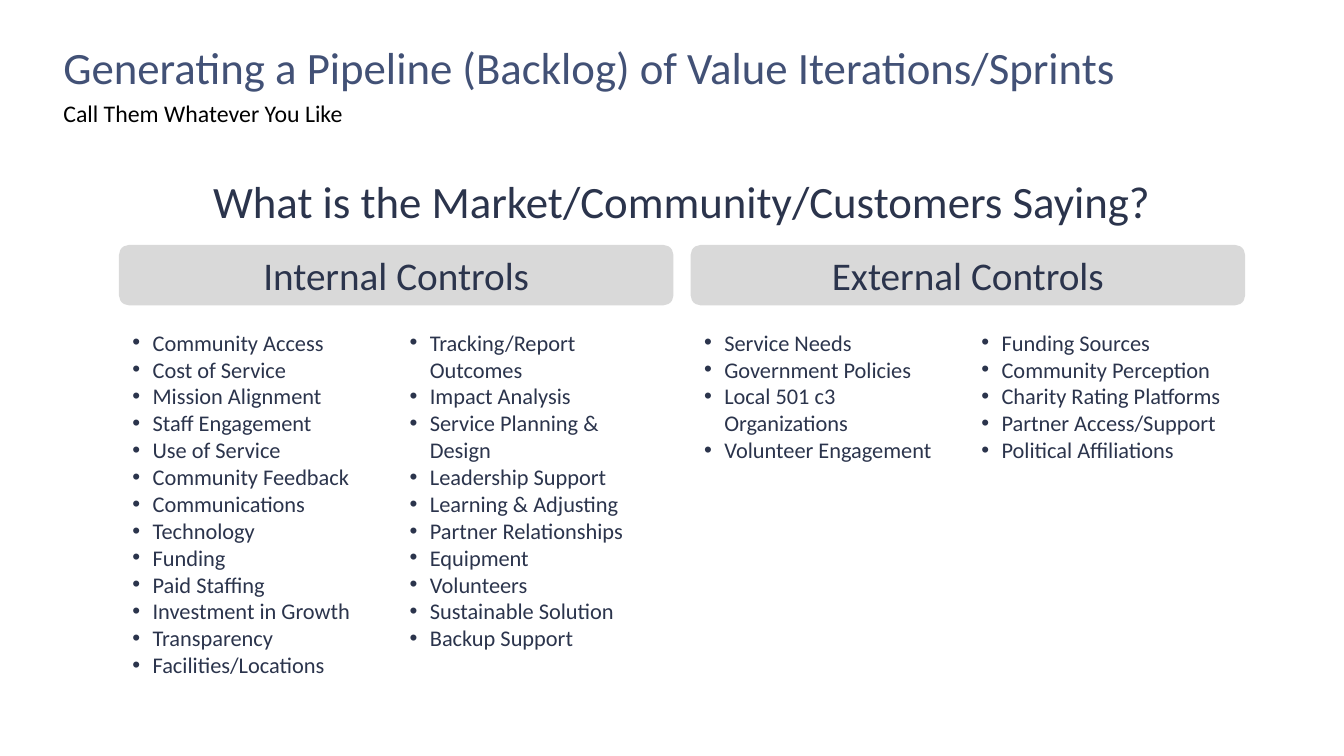
import pptx
import pptx.dml.color
import pptx.enum.shapes
import pptx.enum.text
import pptx.oxml.ns
import pptx.util
from lxml import etree

PX = 9144  # EMU per px, 100 px to the inch
NAVY, BLUE, GREY, BLACK = "2B344C", "425176", "D9D9D9", "000000"
ALIGN = pptx.enum.text.PP_ALIGN
ANCHOR = pptx.enum.text.MSO_ANCHOR

SECTION_LEFT, SECTION_STEP, SECTION_WIDTH = 118, 567, 550
LIST_WIDTH = SECTION_WIDTH // 2
SECTIONS = {
    "Internal Controls": [
        ["Community Access", "Cost of Service", "Mission Alignment",
         "Staff Engagement", "Use of Service", "Community Feedback",
         "Communications", "Technology", "Funding", "Paid Staffing",
         "Investment in Growth", "Transparency", "Facilities/Locations"],
        ["Tracking/Report Outcomes", "Impact Analysis",
         "Service Planning & Design", "Leadership Support",
         "Learning & Adjusting", "Partner Relationships", "Equipment",
         "Volunteers", "Sustainable Solution", "Backup Support"],
    ],
    "External Controls": [
        ["Service Needs", "Government Policies",
         "Local 501 c3 Organizations", "Volunteer Engagement"],
        ["Funding Sources", "Community Perception",
         "Charity Rating Platforms", "Partner Access/Support",
         "Political Affiliations"],
    ],
}


def px(length):
    return pptx.util.Emu(length * PX)


def colour(code):
    return pptx.dml.color.RGBColor.from_string(code)


def set_all(target, values):
    for name, value in values.items():
        setattr(target, name, value)


def add_bullet(para):
    properties = para._p.get_or_add_pPr()
    properties.set("marL", str(px(20)))
    properties.set("indent", str(px(-20)))
    for tag, name, value in (("a:buFont", "typeface", "Arial"),
                             ("a:buChar", "char", "•")):
        etree.SubElement(properties, pptx.oxml.ns.qn(tag)).set(name, value)


def write(box, lines, size, code, frame_format, para_format, bullets=False):
    frame = box.text_frame
    set_all(frame, {"word_wrap": True, **frame_format})
    for number, line in enumerate(lines):
        para = frame.add_paragraph() if number else frame.paragraphs[0]
        if bullets:
            add_bullet(para)
        set_all(para, para_format)
        span = para.add_run()
        span.text = line
        set_all(span.font, {"name": "Calibri", "size": pptx.util.Pt(size)})
        span.font.color.rgb = colour(code)


def add_text(page, place, text, size, code, anchor, **para_format):
    box = page.shapes.add_textbox(*map(px, place))
    write(box, [text], size, code, {"vertical_anchor": anchor}, para_format)


def add_panel(page, place, fill=None):
    """Add a rounded rectangle without outline, filled only if a colour is given."""
    kind = pptx.enum.shapes.MSO_SHAPE.ROUNDED_RECTANGLE
    panel = page.shapes.add_shape(kind, *map(px, place))
    panel.shadow.inherit = False
    panel.line.fill.background()
    if fill:
        panel.fill.solid()
        panel.fill.fore_color.rgb = colour(fill)
    else:
        panel.fill.background()
    return panel


def add_header(page, left, text):
    panel = add_panel(page, (left, 243, SECTION_WIDTH, 60), GREY)
    write(panel, [text], 28, NAVY, {"vertical_anchor": ANCHOR.MIDDLE},
          {"alignment": ALIGN.CENTER})


def add_list(page, left, items):
    panel = add_panel(page, (left, 308, LIST_WIDTH, 380))
    write(panel, items, 16, NAVY,
          {"vertical_anchor": ANCHOR.TOP, "margin_left": 0, "margin_right": 0},
          {"alignment": ALIGN.LEFT}, bullets=True)


def main():
    deck = pptx.Presentation()
    set_all(deck, {"slide_width": px(1333), "slide_height": px(750)})
    page = deck.slides.add_slide(deck.slide_layouts[6])

    add_text(page, (53, 32, 1226, 66),
             "Generating a Pipeline (Backlog) of Value Iterations/Sprints",
             32, BLUE, ANCHOR.BOTTOM)
    add_text(page, (53, 90, 1227, 41), "Call Them Whatever You Like",
             17, BLACK, ANCHOR.TOP, line_spacing=1.1)
    add_text(page, (SECTION_LEFT, 161, SECTION_STEP + SECTION_WIDTH, 76),
             "What is the Market/Community/Customers Saying?",
             32, NAVY, ANCHOR.MIDDLE, alignment=ALIGN.CENTER)

    for number, (heading, lists) in enumerate(SECTIONS.items()):
        left = SECTION_LEFT + number * SECTION_STEP
        add_header(page, left, heading)
        for column, items in enumerate(lists):
            add_list(page, left + column * LIST_WIDTH, items)

    deck.save("out.pptx")


if __name__ == "__main__":
    main()
